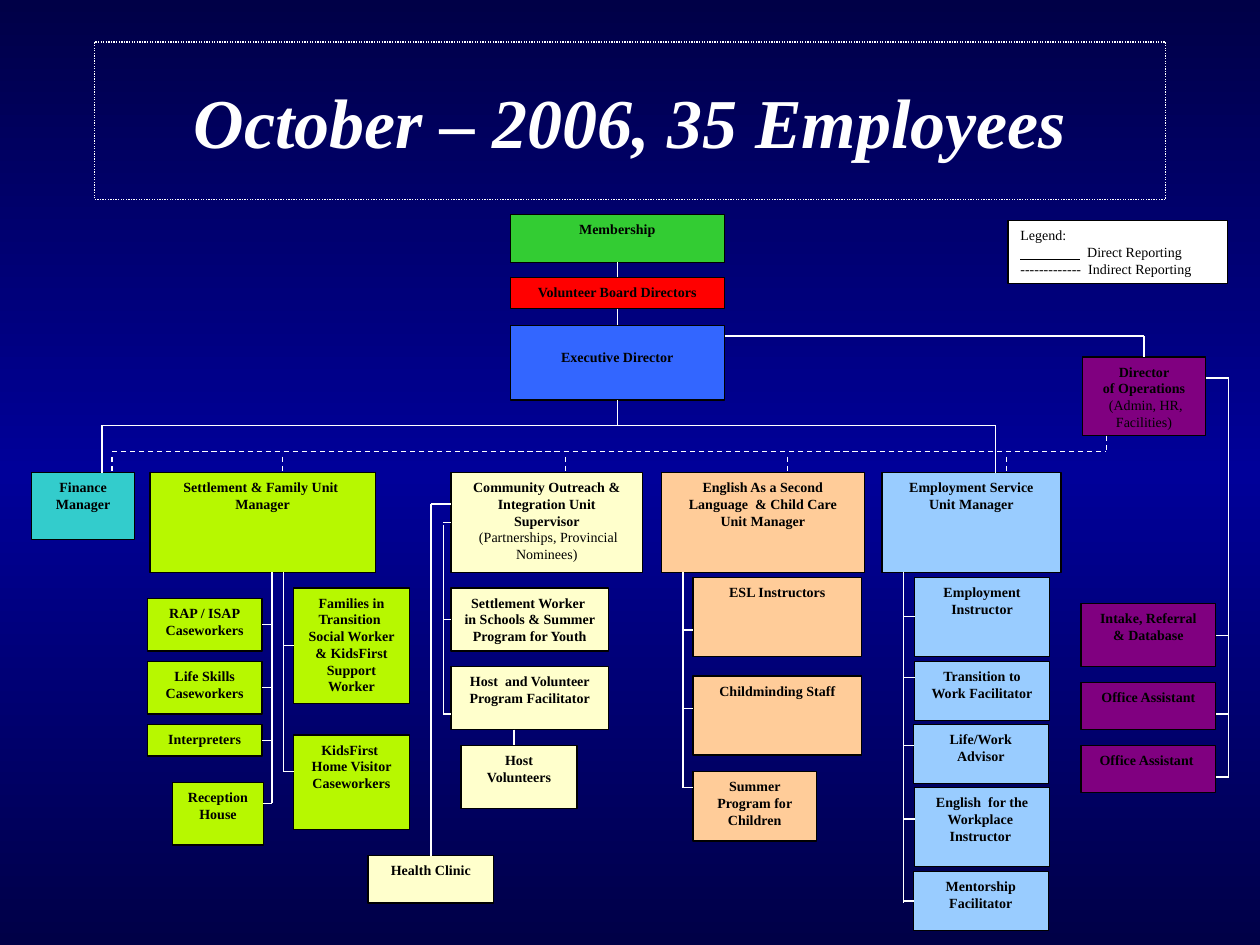
import copy

import pptx
import pptx.dml.color
import pptx.enum.dml
import pptx.enum.shapes
import pptx.enum.text
import pptx.oxml
import pptx.oxml.ns
import pptx.util

COLS, ROWS = 100, 90  # grid over the 10 x 7.5 inch slide
TOP, LEFT, BOTTOM, RIGHT = range(4)  # connection sites of a rectangle
DASH = pptx.enum.dml.MSO_LINE.DASH
DOT = pptx.enum.dml.MSO_LINE.ROUND_DOT
CENTER = pptx.enum.text.PP_ALIGN.CENTER

LIME, CREAM, PEACH, SKY, PURPLE = "B7F800", "FFFFCC", "FFCC99", "99CCFF", "800080"


def rgb(hex_string):
    return pptx.dml.color.RGBColor.from_string(hex_string)


def add_run(p, text, size=8, color="000000", bold=True, italic=None, underline=None):
    r = p.add_run()
    r.text = text
    f = r.font
    f.name, f.size, f.color.rgb = "Times New Roman", pptx.util.Pt(size), rgb(color)
    f.bold, f.italic, f.underline = bold, italic, underline
    return r


class Chart:
    """Organisation chart style and the slide it is drawn on."""

    def __init__(self, prs):
        self.w, self.h = prs.slide_width, prs.slide_height
        self.s = prs.slides.add_slide(prs.slide_layouts[5])

    def x(self, col):
        return round(self.w * col / COLS)

    def y(self, row):
        return round(self.h * row / ROWS)

    def background(self, edge, middle):
        fill = self.s.background.fill
        fill.gradient()
        fill.gradient_angle = 90
        stops = next(self.s.element.iter(pptx.oxml.ns.qn("a:gsLst")))
        stops.insert(1, copy.deepcopy(stops[0]))
        for stop, color, pos in zip(fill.gradient_stops, (edge, middle, edge), (0, 0.5, 1)):
            stop.color.rgb, stop.position = rgb(color), pos

    def outline(self, line, color, dash=None):
        line.color.rgb, line.width = rgb(color), pptx.util.Pt(0.75)
        if dash:
            line.dash_style = dash

    def title(self, text, x, y, w, h):
        sp = self.s.shapes.title
        sp.left, sp.top, sp.width, sp.height = self.x(x), self.y(y), self.x(w), self.y(h)
        self.outline(sp.line, "FFFFFF", DOT)
        tf = sp.text_frame
        tf.auto_size = pptx.enum.text.MSO_AUTO_SIZE.NONE
        tf.vertical_anchor = pptx.enum.text.MSO_ANCHOR.MIDDLE
        p = tf.paragraphs[0]
        p.alignment = CENTER
        add_run(p, text, size=40, color="FFFFFF", italic=True)

    def box(self, x, y, w, h, color, *lines, note=None, align=CENTER):
        """Rectangle with one paragraph a line; note is a last, plain one."""
        sp = self.s.shapes.add_shape(pptx.enum.shapes.MSO_SHAPE.RECTANGLE,
                                     self.x(x), self.y(y), self.x(w), self.y(h))
        sp.shadow.inherit = False
        sp.fill.solid()
        sp.fill.fore_color.rgb = rgb(color)
        self.outline(sp.line, "000000")
        tf = sp.text_frame
        tf.word_wrap = True
        tf.vertical_anchor = pptx.enum.text.MSO_ANCHOR.TOP
        texts = [(t, True) for t in lines] + ([(note, False)] if note else [])
        for i, (text, bold) in enumerate(texts):
            p = tf.add_paragraph() if i else tf.paragraphs[0]
            p.alignment = align
            add_run(p, text, bold=bold)
        return sp

    def line(self, x1, y1, x2, y2, dash=None, start=None, end=None):
        """White line; start and end are (box, site) pairs to join."""
        cn = self.s.shapes.add_connector(pptx.enum.shapes.MSO_CONNECTOR.STRAIGHT,
                                         self.x(x1), self.y(y1), self.x(x2), self.y(y2))
        self.outline(cn.line, "FFFFFF", dash)
        cn._element.spPr.append(pptx.oxml.parse_xml(
            "<a:effectLst %s/>" % pptx.oxml.ns.nsdecls("a")))
        if start:
            cn.begin_connect(*start)
        if end:
            cn.end_connect(*end)

    def branch(self, trunk, box, side=LEFT, row=None):
        """Horizontal line from a trunk to a box, joined at its middle by default."""
        edge = (box.left + (box.width if side == RIGHT else 0)) * COLS / self.w
        middle = (box.top + box.height / 2) * ROWS / self.h
        y = middle if row is None else row
        self.line(trunk, y, edge, y, end=(box, side) if row is None else None)

    def legend(self, x, y, w, h):
        sp = self.box(x, y, w, h, "FFFFFF", note="Legend:",
                      align=pptx.enum.text.PP_ALIGN.LEFT)
        p = sp.text_frame.add_paragraph()
        p.alignment = pptx.enum.text.PP_ALIGN.LEFT
        add_run(p, " " * 17, bold=False, underline=True)
        add_run(p, "  Direct Reporting", bold=False)
        p = sp.text_frame.add_paragraph()
        p.alignment = pptx.enum.text.PP_ALIGN.LEFT
        add_run(p, "-------------  Indirect Reporting", bold=False)


def main():
    prs = pptx.Presentation()
    prs.slide_width, prs.slide_height = pptx.util.Inches(10), pptx.util.Inches(7.5)
    c = Chart(prs)
    c.background("000047", "000099")
    c.title("October – 2006, 35 Employees", 7.5, 4, 85, 15)
    c.legend(80, 21, 17.4, 6)

    # Leadership
    members = c.box(40.5, 20.4, 17, 4.6, "33CC33", "Membership")
    board = c.box(40.5, 26.4, 17, 3, "FF0000", "Volunteer Board Directors")
    executive = c.box(40.5, 31, 17, 7.1, "3366FF", "Executive Director")
    executive.text_frame.margin_top = pptx.util.Inches(0.18)
    director = c.box(85.9, 34, 9.8, 7.5, PURPLE, "Director", "of Operations",
                     note=" (Admin, HR, Facilities)")
    c.line(49, 25, 49, 26.4, start=(members, BOTTOM), end=(board, TOP))
    c.line(49, 29.4, 49, 31, start=(board, BOTTOM), end=(executive, TOP))
    c.line(49, 38.1, 49, 40.5, start=(executive, BOTTOM))
    c.line(57.5, 32, 90.8, 32)
    c.line(90.8, 32, 90.8, 34, end=(director, TOP))

    # Unit managers
    c.box(2.5, 45, 8.2, 6.4, "33CCCC", "Finance", "Manager")
    c.box(11.9, 45, 17.9, 9.5, LIME, "Settlement & Family Unit ", "Manager")
    outreach = c.box(35.8, 45, 15.2, 9.5, CREAM,
                     "Community Outreach & Integration Unit Supervisor",
                     note=" (Partnerships, Provincial Nominees)")
    c.box(52.5, 45, 16.1, 9.5, PEACH,
          "English As a Second Language  & Child Care Unit Manager")
    c.box(70, 45, 14.2, 9.5, SKY, "Employment Service Unit Manager")

    # Direct and indirect reporting to the managers
    c.line(8.1, 40.5, 79, 40.5)
    for x in (8.1, 79):
        c.line(x, 40.5, x, 45)
    c.line(8.9, 43, 87.8, 43, DASH)
    c.line(87.8, 41.5, 87.8, 43, DASH)
    for x in (8.9, 22.4, 44.9, 62.5, 79.9):
        c.line(x, 43.5, x, 45, DASH)

    # Staff: trunk column, its first and last row, side joined,
    # then each box with the row of its branch (None: the middle)
    teams = [
        (21.6, 54.5, 76.5, RIGHT, [
            (None, (11.7, 57, 9.1, 5, LIME, "RAP / ISAP", "Caseworkers")),
            (None, (11.7, 63, 9.1, 5, LIME, "Life Skills Caseworkers")),
            (None, (11.7, 69, 9.1, 3, LIME, "Interpreters")),
            (76.5, (13.7, 74.5, 7.2, 6, LIME, "Reception House"))]),
        (22.5, 54.5, 73.5, LEFT, [
            (None, (23.3, 56, 9.2, 11, LIME, "Families in Transition ",
                    "Social Worker & KidsFirst Support Worker")),
            (73.5, (23.3, 70, 9.2, 9, LIME, "KidsFirst ", "Home Visitor Caseworkers"))]),
        (35.2, 50, 68, LEFT, [
            (None, (35.8, 56, 12.5, 6, CREAM, "Settlement Worker ",
                    "in Schools & Summer Program for Youth")),
            (68, (35.8, 63.5, 12.5, 6, CREAM, "Host  and Volunteer Program Facilitator"))]),
        (54.2, 54.5, 75, LEFT, [
            (60, (55, 55, 13.4, 7.5, PEACH, "ESL Instructors")),
            (67.5, (55, 64.4, 13.4, 7.5, PEACH, "Childminding Staff")),
            (75, (55, 73.5, 9.8, 6.6, PEACH, "Summer Program for Children"))]),
        (71.7, 54.5, 86, LEFT, [
            (None, (72.6, 55, 10.7, 7.5, SKY, "Employment Instructor")),
            (64.5, (72.6, 63, 10.7, 5.6, SKY, "Transition to Work Facilitator")),
            (71, (72.5, 69, 10.7, 5.6, SKY, "Life/Work Advisor")),
            (78, (72.6, 75, 10.7, 7.5, SKY, "English  for the Workplace ", "Instructor ")),
            (None, (72.5, 83, 10.7, 5.6, SKY, "Mentorship Facilitator"))]),
        (97.5, 36, 74, RIGHT, [
            (None, (85.8, 57.5, 10.7, 6, PURPLE, "Intake, Referral", "& Database")),
            (68, (85.8, 65, 10.7, 4.5, PURPLE, "Office Assistant")),
            (74, (85.8, 71, 10.7, 4.5, PURPLE, "Office Assistant "))]),
    ]
    for trunk, first, last, side, staff in teams:
        c.line(trunk, first, trunk, last)
        for row, box in staff:
            c.branch(trunk, c.box(*box), side, row)
    c.branch(97.5, director, RIGHT, 36)
    c.branch(35.2, outreach)

    # Host volunteers and the health clinic
    c.box(36.6, 71, 9.2, 6, CREAM, "Host Volunteers")
    c.line(40.8, 69.5, 40.8, 71)
    clinic = c.box(29.2, 81.5, 10, 4.5, CREAM, "Health Clinic")
    c.branch(34.2, outreach, row=48)
    c.line(34.2, 48, 34.2, 81.5, end=(clinic, TOP))

    prs.save("out.pptx")


if __name__ == "__main__":
    main()
